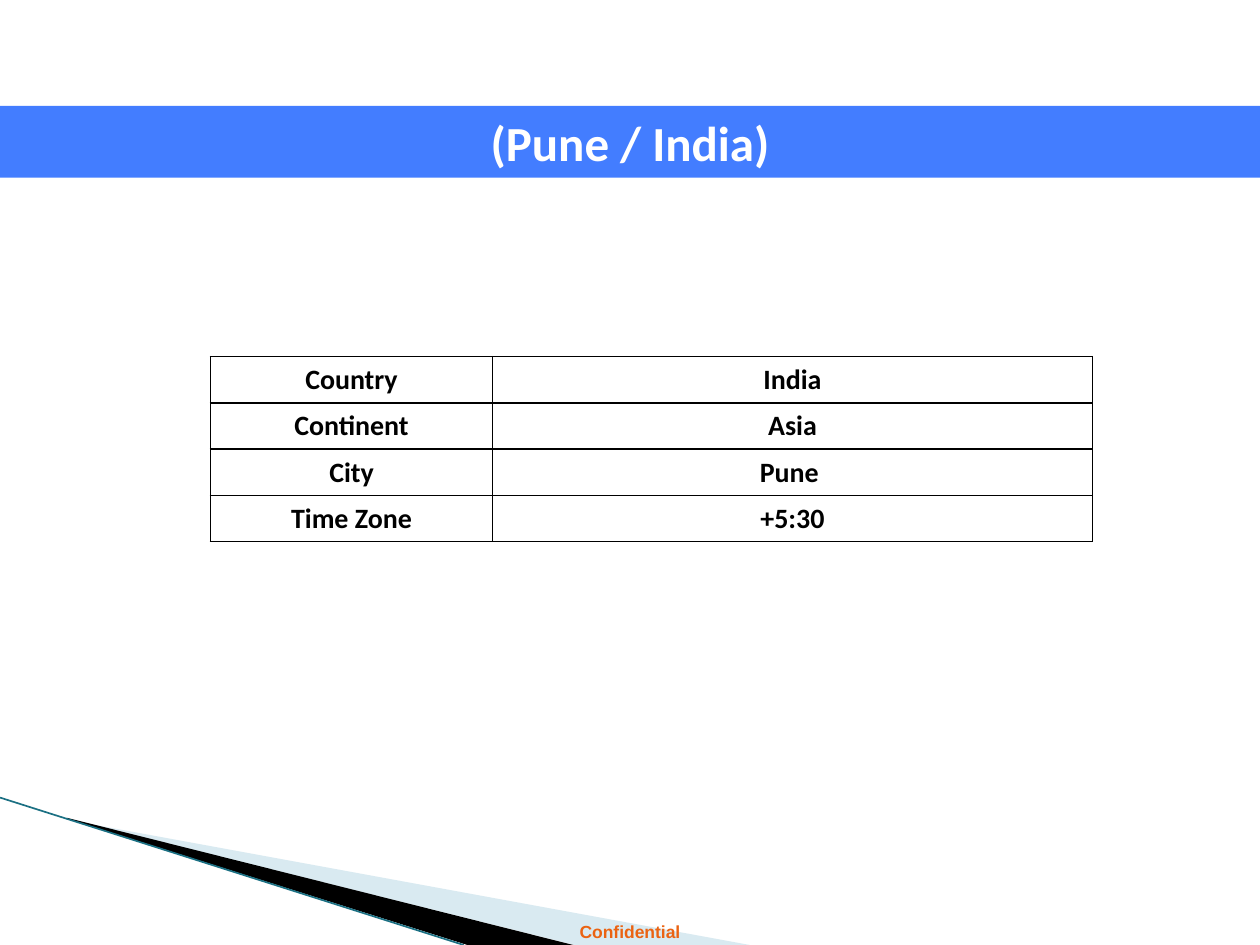
from lxml import etree
from pptx import Presentation
from pptx import util as u
from pptx.dml.color import RGBColor
from pptx.enum import shapes, text
from pptx.oxml import ns

COLORS = {"banner": "437DFF", "white": "FFFFFF", "black": "000000",
          "pale": "A0CBDC", "edge": "1B7083", "notice": "EB6312"}
W, H = u.Inches(10), u.Inches(7.5)
UNIT = W / 100
FACTS = [("Country", "India"), ("Continent", "Asia"),
         ("City", "Pune "), ("Time Zone", "+5:30")]


def box(left, top, width, height):
    """Turn grid units, a hundredth of the slide width each, into lengths."""
    return [u.Emu(round(n * UNIT)) for n in (left, top, width, height)]


def rgb(name):
    """Return the named colour."""
    return RGBColor.from_string(COLORS[name])


def write(tf, words, size, font, color):
    """Put one bold centred paragraph in a middle-anchored text frame."""
    tf.text = words
    tf.vertical_anchor = text.MSO_ANCHOR.MIDDLE
    p = tf.paragraphs[0]
    p.alignment = text.PP_ALIGN.CENTER
    f = p.runs[0].font
    f.size, f.name, f.bold = u.Pt(size), font, True
    f.color.rgb = rgb(color)


def add_wedge(s, area, points, color, alpha=100):
    """Draw a filled outline from points in grid units inside the area."""
    pts = [(area[0] + x * UNIT, area[1] + y * UNIT) for x, y in points]
    builder = s.shapes.build_freeform(round(pts[0][0]), round(pts[0][1]))
    builder.add_line_segments([(round(x), round(y)) for x, y in pts[1:]])
    sp = builder.convert_to_shape()
    sp.shadow.inherit = False
    sp.fill.solid()
    sp.fill.fore_color.rgb = rgb(color)
    sp.line.fill.background()
    fill = sp.fill._xPr.find(ns.qn("a:solidFill"))[0]
    etree.SubElement(fill, ns.qn("a:alpha"), val=str(alpha * 1000))


def add_corner(s, area):
    """Draw the two wedges and the thin edge in the bottom corner."""
    left, top, width, height = area
    add_wedge(s, area, [(5.5, 1.8), (59.5, 11.7), (45.6, 11.7), (5.5, 1.7)], "pale", 40)
    add_wedge(s, area, [(5.3, 1.6), (45.5, 11.7), (37.1, 11.7), (5.4, 1.7)], "black")
    line = s.shapes.add_connector(shapes.MSO_CONNECTOR.STRAIGHT, left, top,
                                  left + round(36.8 * UNIT), top + height)
    line.line.color.rgb = rgb("edge")
    line.line.width = u.Pt(0.95)
    etree.SubElement(line._element.spPr, ns.qn("a:effectLst"))


def add_notice(s, area):
    """Write the confidentiality notice along the bottom."""
    tf = s.shapes.add_textbox(*area).text_frame
    tf.word_wrap = True
    write(tf, "Confidential", 10, "Arial", "notice")


def add_banner(s, area):
    """Format the title as a full-width band."""
    sp = s.shapes.title
    sp.left, sp.top, sp.width, sp.height = area
    sp.fill.solid()
    sp.fill.fore_color.rgb = rgb("banner")
    write(sp.text_frame, "(Pune / India)", 28, "Calibri", "white")
    sp.text_frame.auto_size = text.MSO_AUTO_SIZE.NONE


def add_borders(cell):
    """Rule all four sides of a cell."""
    tc_pr = cell._tc.get_or_add_tcPr()
    for i, side in enumerate(("lnL", "lnR", "lnT", "lnB")):
        ln = etree.Element(ns.qn("a:" + side), w=str(u.Pt(1)))
        fill = etree.SubElement(ln, ns.qn("a:solidFill"))
        etree.SubElement(fill, ns.qn("a:srgbClr"), val=COLORS["black"])
        tc_pr.insert(i, ln)


def add_facts(s, area):
    """Fill the table of location facts."""
    table = s.shapes.add_table(len(FACTS), 2, *area).table
    table.first_row = table.horz_banding = False
    for col, share in zip(table.columns, (0.32, 0.68)):
        col.width = round(area[2] * share)
    for r, row in enumerate(FACTS):
        for c, words in enumerate(row):
            cell = table.cell(r, c)
            cell.margin_top = cell.margin_bottom = u.Inches(0.05)
            write(cell.text_frame, words, 16, "Calibri", "black")
            cell.vertical_anchor = text.MSO_ANCHOR.MIDDLE
            cell.fill.background()
            add_borders(cell)


def main():
    """Build the slide and save it."""
    prs = Presentation()
    prs.slide_width, prs.slide_height = W, H
    s = prs.slides.add_slide(prs.slide_layouts.get_by_name("Title Only"))
    add_corner(s, box(0, 63.3, 60, 11.7))
    add_notice(s, box(0, 72.6, 100, 2.7))
    add_banner(s, box(0, 8.4, 100, 5.7))
    add_facts(s, box(16.7, 28.3, 70, 14.7))
    prs.save("out.pptx")


if __name__ == "__main__":
    main()
